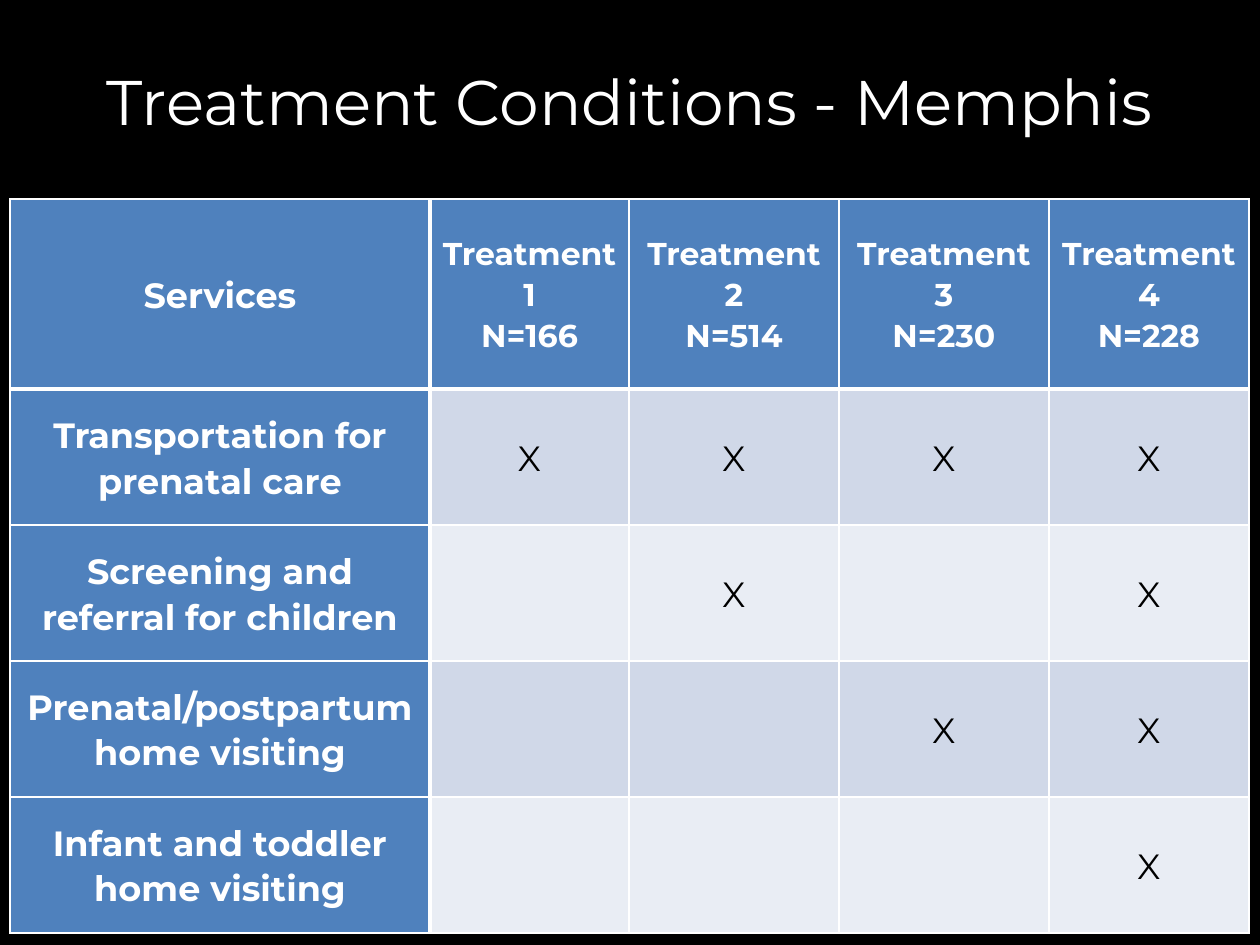
from dataclasses import dataclass

from lxml import etree
from pptx import Presentation
from pptx.dml.color import RGBColor
from pptx.enum.text import MSO_ANCHOR, PP_ALIGN
from pptx.oxml.ns import qn
from pptx.util import Pt

EMU_PER_PX = 914400 / 126
MIDDLE = MSO_ANCHOR.MIDDLE
CENTER = PP_ALIGN.CENTER
TITLE_ONLY = 5


@dataclass(frozen=True)
class Theme:
    font: str = "Montserrat"
    background: str = "000000"
    light: str = "FFFFFF"
    dark: str = "000000"
    header: str = "4F81BD"
    bands: tuple = ("D0D8E8", "E9EDF4")
    title_size: int = 36
    body_size: int = 20
    treatment_size: int = 18
    line_spacing: float = 1.07
    thin: int = 1
    thick: int = 3


THEME = Theme()

TITLE = "Treatment Conditions - Memphis"
TREATMENT_SIZES = (166, 514, 230, 228)
# Each service with the treatments that include it
SERVICES = (
    ("Transportation for prenatal care", (1, 2, 3, 4)),
    ("Screening and referral for children", (2, 4)),
    ("Prenatal/postpartum home visiting", (3, 4)),
    ("Infant and toddler home visiting", (4,)),
)
COLUMN_WIDTHS = (420, 199, 210, 210, 200)
HEADER_HEIGHT, SERVICE_HEIGHT = 190, 136


def px(length):
    return round(length * EMU_PER_PX)


def write_text(frame, text, size=THEME.body_size, color=THEME.light,
               bold=False, spacing=None):
    """Fill a text frame with centred text, one paragraph per line."""
    frame.text = text
    frame.word_wrap = True
    for paragraph in frame.paragraphs:
        paragraph.alignment = CENTER
        paragraph.line_spacing = spacing
        for run in paragraph.runs:
            run.font.name = THEME.font
            run.font.size = Pt(size)
            run.font.bold = bold
            run.font.color.rgb = RGBColor.from_string(color)


def set_borders(cell, **widths):
    """Draw cell borders; widths in points keyed L, R, T, B in that order."""
    properties = cell._tc.get_or_add_tcPr()
    for position, (side, width) in enumerate(widths.items()):
        line = etree.Element(qn(f"a:ln{side}"), w=str(Pt(width)))
        fill = etree.SubElement(line, qn("a:solidFill"))
        etree.SubElement(fill, qn("a:srgbClr"), val=THEME.light)
        properties.insert(position, line)


def format_cell(cell, row, column):
    is_header = row == 0 or column == 0
    fill = THEME.header if is_header else THEME.bands[(row - 1) % 2]
    cell.fill.solid()
    cell.fill.fore_color.rgb = RGBColor.from_string(fill)
    cell.vertical_anchor = MIDDLE
    cell.margin_left = cell.margin_right = px(9)
    cell.margin_top = cell.margin_bottom = 0
    set_borders(
        cell,
        L=THEME.thick if column == 1 else THEME.thin,
        R=THEME.thick if column == 0 else THEME.thin,
        T=THEME.thick if row == 1 else THEME.thin,
        B=THEME.thick if row == 0 else THEME.thin,
    )


def add_title(slide, left, top, width, height):
    title = slide.shapes.title
    title.left, title.top = px(left), px(top)
    title.width, title.height = px(width), px(height)
    title.text_frame.vertical_anchor = MIDDLE
    write_text(title.text_frame, TITLE, size=THEME.title_size)


def add_services_table(slide, left, top):
    row_heights = [HEADER_HEIGHT] + [SERVICE_HEIGHT] * len(SERVICES)
    table = slide.shapes.add_table(
        len(row_heights), len(COLUMN_WIDTHS), px(left), px(top),
        px(sum(COLUMN_WIDTHS)), px(sum(row_heights))).table
    for column, width in zip(table.columns, COLUMN_WIDTHS):
        column.width = px(width)
    for row, height in zip(table.rows, row_heights):
        row.height = px(height)

    treatments = [f"Treatment {number}\nN={size}"
                  for number, size in enumerate(TREATMENT_SIZES, 1)]
    rows = [["Services"] + treatments]
    for service, included in SERVICES:
        marks = ["X" if number in included else ""
                 for number in range(1, len(treatments) + 1)]
        rows.append([service] + marks)

    for r, texts in enumerate(rows):
        for c, text in enumerate(texts):
            cell = table.cell(r, c)
            is_header = r == 0 or c == 0
            is_treatment = r == 0 and c > 0
            format_cell(cell, r, c)
            if text:
                write_text(
                    cell.text_frame, text,
                    size=THEME.treatment_size if is_treatment else THEME.body_size,
                    color=THEME.light if is_header else THEME.dark,
                    bold=is_header, spacing=THEME.line_spacing)


def main():
    presentation = Presentation()
    presentation.slide_width, presentation.slide_height = px(1260), px(945)
    slide = presentation.slides.add_slide(presentation.slide_layouts[TITLE_ONLY])
    slide.background.fill.solid()
    slide.background.fill.fore_color.rgb = RGBColor.from_string(THEME.background)
    add_title(slide, 26, 21, 1207, 158)
    add_services_table(slide, 10, 199)
    presentation.save("out.pptx")


if __name__ == "__main__":
    main()
